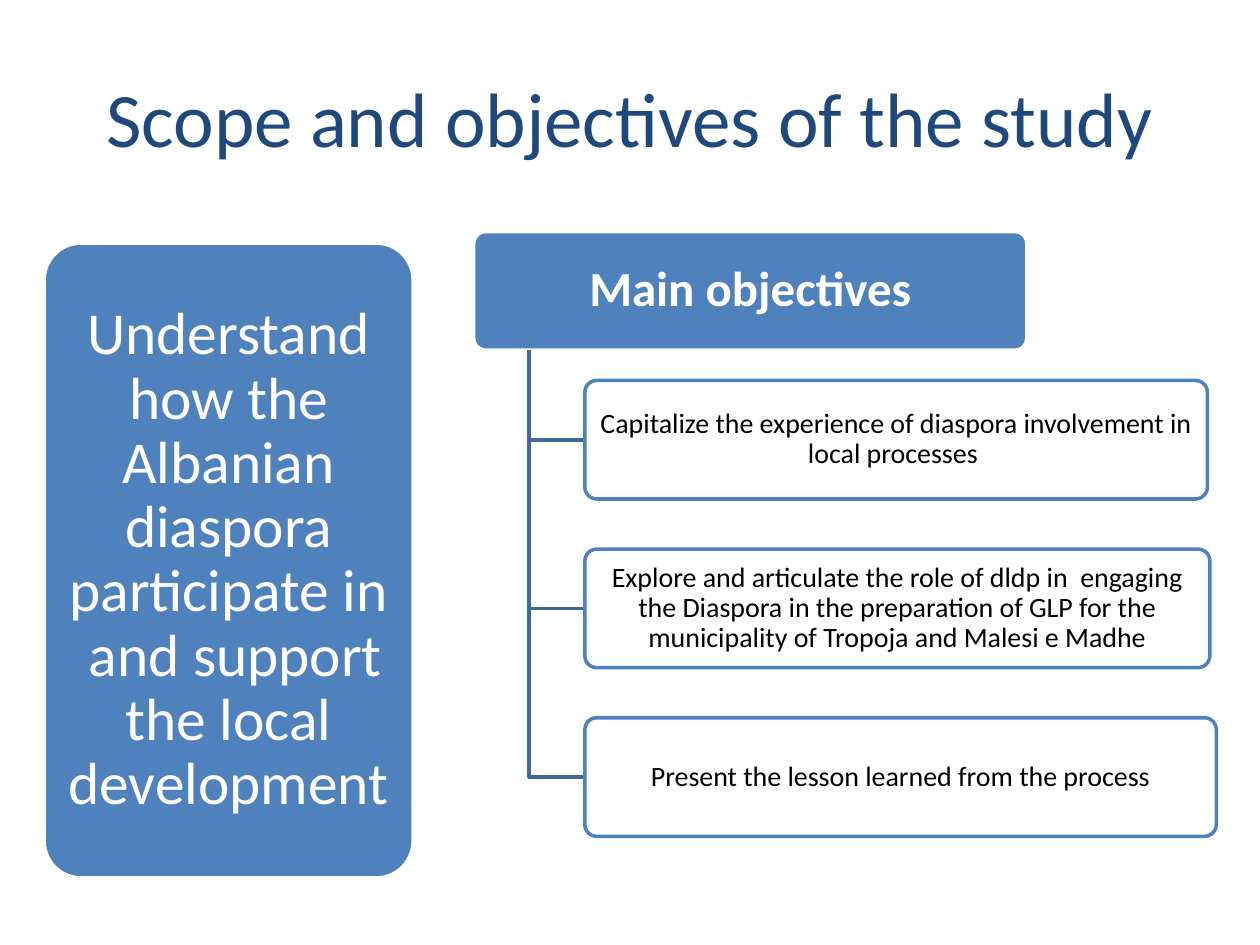
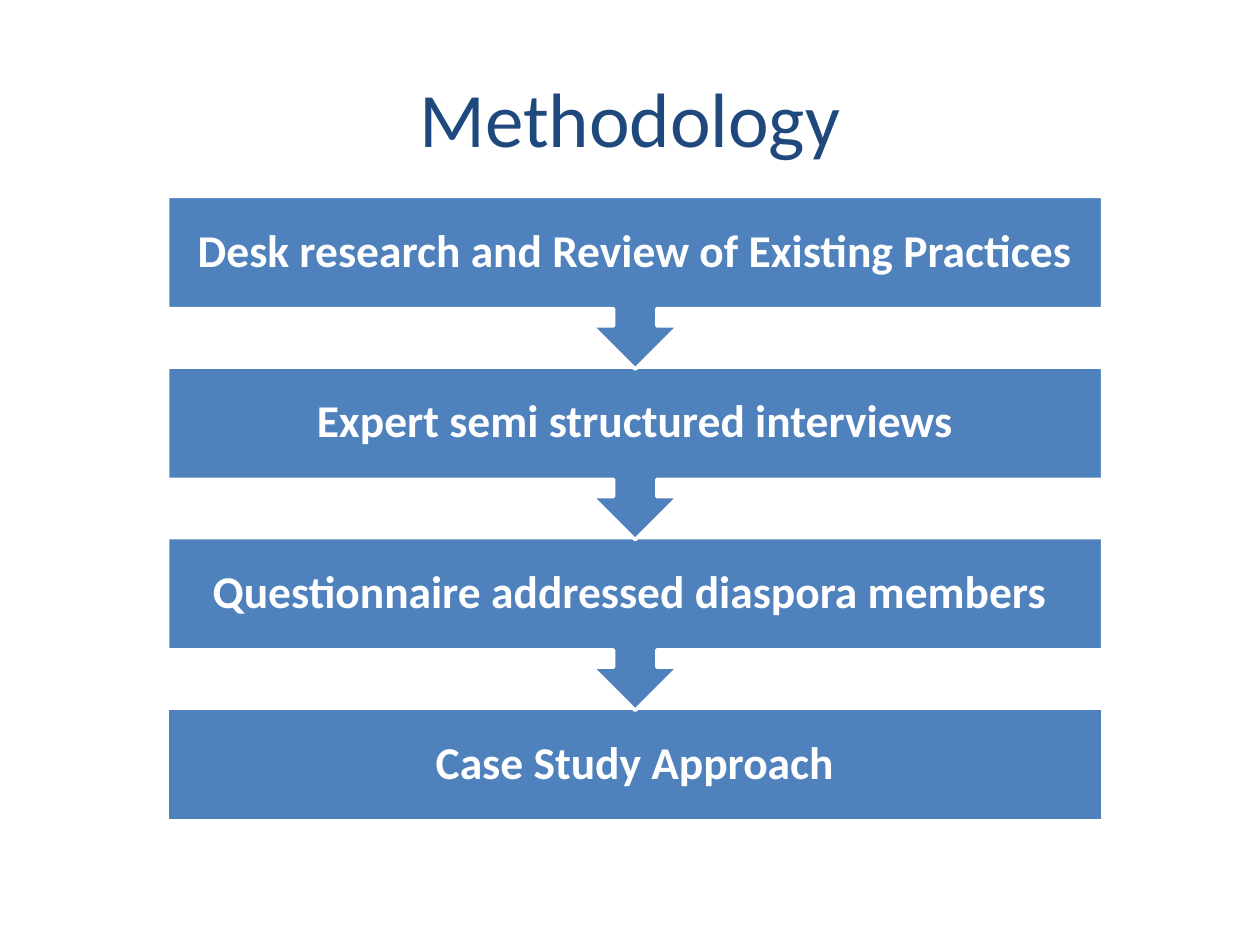
from dataclasses import dataclass, field

from lxml import etree
from pptx import Presentation
from pptx import util as u
from pptx.dml.color import RGBColor
from pptx.enum import shapes, text
from pptx.oxml.ns import qn

HUES = {"title": "1F497D", "blue": "4F81BD", "trunk": "3F6797",
        "white": "FFFFFF", "black": "000000"}
FONT = "Calibri"
KIND = shapes.MSO_SHAPE


@dataclass
class Box:
    left: float
    top: float
    width: float
    height: float

    def place(self) -> list:
        return [u.Cm(v) for v in (self.left, self.top, self.width, self.height)]


@dataclass
class Style:
    size: int
    hue: str = "white"
    bold: bool = False
    pad: tuple = (0.25, 0.13)
    space: float = 0.9


@dataclass
class Card:
    box: Box
    words: str
    style: Style
    fill: str = "blue"
    edge: str = "white"
    clear: int = field(default=0)


TITLE = Style(44, "title", space=1.0)
SCOPE = Style(34, pad=(0.18, 0.13))
HEAD = Style(28, bold=True, pad=(0.15, 0.1))
GOAL = Style(16, "black", pad=(0.08, 0.05))
STEP = Style(26, bold=True, pad=(0.51, 0.51))


def tint(hue: str) -> RGBColor:
    return RGBColor.from_string(HUES[hue])


def assign(thing, values: dict) -> None:
    for name, value in values.items():
        setattr(thing, name, value)


def write(shape, words: str, style: Style) -> None:
    frame = shape.text_frame
    side, end = (u.Cm(v) for v in style.pad)
    assign(frame, {"word_wrap": True, "vertical_anchor": text.MSO_ANCHOR.MIDDLE,
                   "margin_left": side, "margin_right": side,
                   "margin_top": end, "margin_bottom": end})
    para = frame.paragraphs[0]
    assign(para, {"alignment": text.PP_ALIGN.CENTER, "line_spacing": style.space})
    run = para.add_run()
    run.text = words
    assign(run.font, {"name": FONT, "size": u.Pt(style.size), "bold": style.bold})
    run.font.color.rgb = tint(style.hue)


def label(slide, box: Box, words: str, style: Style) -> None:
    write(slide.shapes.add_textbox(*box.place()), words, style)


def outline(shape, hue: str) -> None:
    shape.shadow.inherit = False
    shape.line.color.rgb = tint(hue)
    shape.line.width = u.Pt(2)


def draw(slide, kind, box: Box, fill: str = "blue", edge: str = "white"):
    shape = slide.shapes.add_shape(kind, *box.place())
    shape.fill.solid()
    shape.fill.fore_color.rgb = tint(fill)
    outline(shape, edge)
    return shape


def fade(shape, percent: int) -> None:
    """Make the fill see-through by the given percent."""
    hue = shape.fill._xPr.find(qn("a:solidFill"))[0]
    etree.SubElement(hue, qn("a:alpha")).set("val", str((100 - percent) * 1000))


def add_card(slide, card: Card) -> None:
    shape = draw(slide, KIND.ROUNDED_RECTANGLE, card.box, card.fill, card.edge)
    shape.adjustments[0] = 0.1
    if card.clear:
        fade(shape, card.clear)
    write(shape, card.words, card.style)


def add_branch(slide, left: float, top: float, right: float, low: float) -> None:
    """Draw an elbow line down from the heading and across to a goal."""
    path = slide.shapes.build_freeform(u.Cm(left), u.Cm(top))
    path.add_line_segments([(u.Cm(left), u.Cm(low)), (u.Cm(right), u.Cm(low))],
                           close=False)
    shape = path.convert_to_shape()
    shape.fill.background()
    outline(shape, "trunk")


def add_slide(deck, title: str):
    slide = deck.slides.add_slide(deck.slide_layouts[6])
    label(slide, Box(1.27, 0.76, 22.86, 3.18), title, TITLE)
    return slide


def add_scope(deck) -> None:
    slide = add_slide(deck, "Scope and objectives of the study")
    add_card(slide, Card(Box(0.89, 4.9, 7.44, 12.8),
                         "Understand how the Albanian diaspora participate in  "
                         "and support the local development ", SCOPE))
    head = Box(9.55, 4.67, 11.15, 2.39)
    add_card(slide, Card(head, "Main objectives", HEAD))
    goals = [
        (12.55, "Capitalize the experience of diaspora involvement in local processes "),
        (12.6, "Explore and articulate the role of dldp in  engaging the Diaspora in the "
               "preparation of GLP for the municipality of Tropoja and Malesi e Madhe"),
        (12.73, "Present the lesson learned from the process"),
    ]
    left, first, pitch = 11.79, 7.67, 3.4
    for i, (width, words) in enumerate(goals):
        box = Box(left, first + i * pitch, width, head.height)
        add_branch(slide, 10.67, head.top + head.height, left,
                   box.top + box.height / 2)
        add_card(slide, Card(box, words, GOAL, "white", "blue", clear=10))


def add_method(deck) -> None:
    slide = add_slide(deck, "Methodology")
    steps = ["Desk research and Review of Existing Practices ",
             "Expert semi structured interviews",
             "Questionnaire addressed diaspora members ",
             "Case Study Approach"]
    left, first, pitch, width, band, tall = 3.38, 3.96, 3.44, 18.85, 2.26, 3.48
    last = len(steps) - 1
    for i, words in reversed(list(enumerate(steps))):
        box = Box(left, first + i * pitch, width, band)
        if i == last:
            draw(slide, KIND.RECTANGLE, box)
        else:
            arrow = draw(slide, KIND.UP_ARROW_CALLOUT,
                         Box(left, box.top, width, tall))
            arrow.rotation = 180
        label(slide, box, words, STEP)


def main() -> None:
    deck = Presentation()
    assign(deck, {"slide_width": u.Cm(25.4), "slide_height": u.Cm(19.05)})
    add_scope(deck)
    add_method(deck)
    deck.save("out.pptx")


if __name__ == "__main__":
    main()
